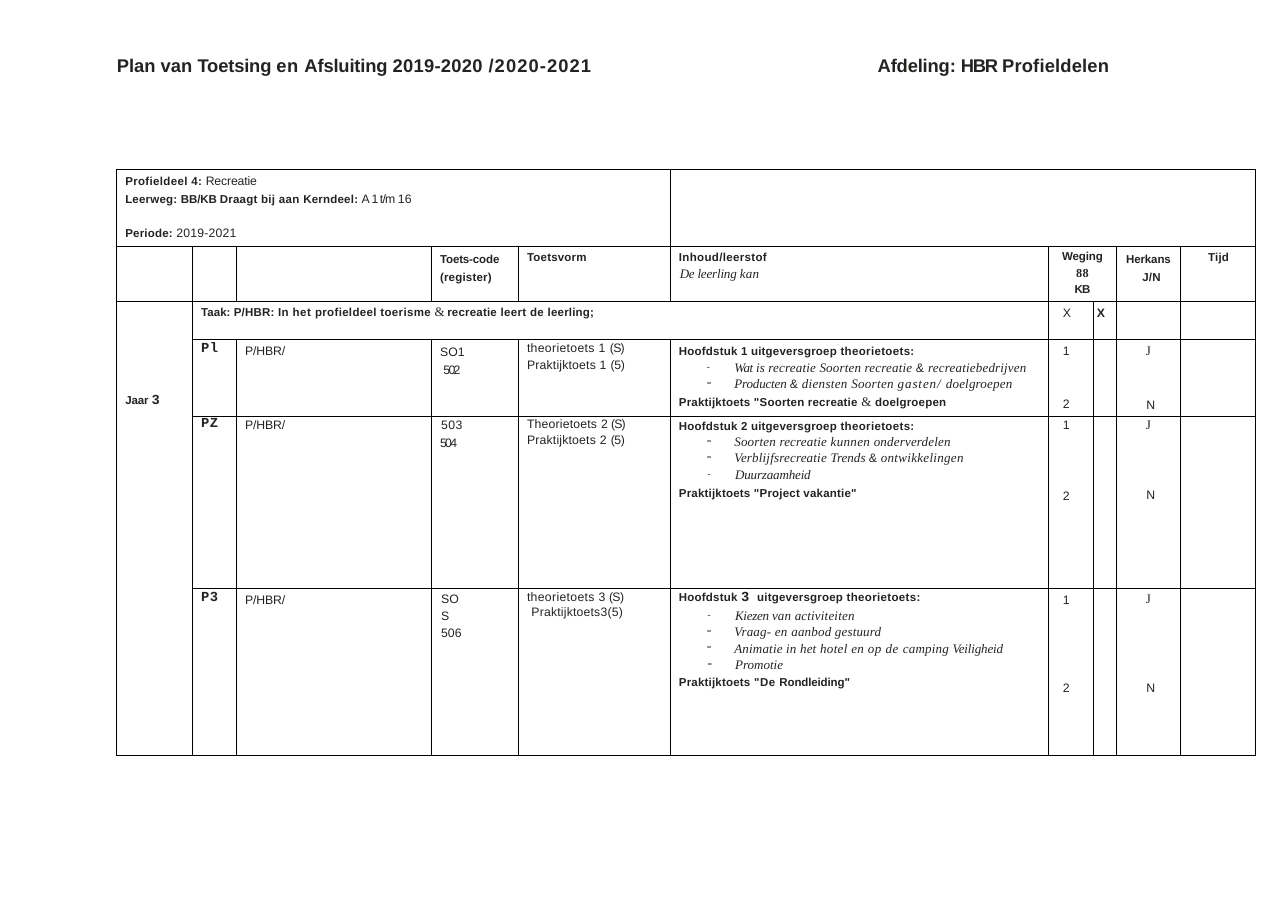
import pptx
import pptx.util
import pptx.dml.color
import pptx.enum.text
from lxml import etree

Pt = pptx.util.Pt
RGB = pptx.dml.color.RGBColor.from_string
ALIGN = pptx.enum.text.PP_ALIGN
A = "{http://schemas.openxmlformats.org/drawingml/2006/main}"

# Styles: font, size, bold, italic
THEME = {
    "ink": "232321", "line": "000000", "bullet": "464646",
    "rule": 0.75, "hairline": 0.25,
    "title": ("Arial", 12, True, False),
    "bold": ("Arial", 7.5, True, False),
    "text": ("Arial", 8, False, False),
    "mark": ("Arial", 8, True, False),
    "serif": ("Times New Roman", 8.5, False, False),
    "number": ("Times New Roman", 8, True, False),
    "topic": ("Times New Roman", 8.5, False, True),
    "code": ("Courier New", 9, True, False),
}


def write(box, top, *paras):
    """Fill a cell or text frame.

    Each paragraph: space before, indent, [(style, text, spacing)], "center" or bullet percent.
    """
    box.margin_left = box.margin_right = box.margin_bottom = 0
    box.margin_top = Pt(top)
    tf = getattr(box, "text_frame", box)
    for i, (before, indent, runs, *mark) in enumerate(paras):
        p = tf.paragraphs[0] if i == 0 else tf.add_paragraph()
        pPr = p._p.get_or_add_pPr()
        pPr.set("marL", str(Pt(indent)))
        pPr.set("indent", "0")
        p.alignment = ALIGN.CENTER if mark == ["center"] else ALIGN.LEFT
        if mark and mark != ["center"]:
            pPr.set("indent", str(Pt(-18)))
            color = etree.SubElement(pPr, A + "buClr")
            etree.SubElement(color, A + "srgbClr", val=THEME["bullet"])
            etree.SubElement(pPr, A + "buSzPct", val=str(mark[0] * 1000))
            etree.SubElement(pPr, A + "buChar", char="-")
        p.space_before = Pt(before if i else 0)
        for style, text, spacing in runs:
            r = p.add_run()
            r.text = text
            f = r.font
            f.name, size, f.bold, f.italic = THEME[style]
            f.size = Pt(size)
            f.color.rgb = RGB(THEME["ink"])
            r._r.get_or_add_rPr().set("spc", str(round(spacing * 100)))


def border(cell, side, width):
    tcPr = cell._tc.get_or_add_tcPr()
    ln = etree.SubElement(tcPr, A + "ln" + side, w=str(Pt(width)))
    fill = etree.SubElement(ln, A + "solidFill")
    etree.SubElement(fill, A + "srgbClr", val=THEME["line"])


prs = pptx.Presentation()
prs.slide_width, prs.slide_height = Pt(841), Pt(595.4)
s = prs.slides.add_slide(prs.slide_layouts[5])

# Headings
title = s.shapes.title
title.left, title.top, title.width, title.height = Pt(75.6), Pt(34.6), Pt(317.5), Pt(16.6)
department = s.shapes.add_textbox(Pt(572.4), Pt(34.6), Pt(154.8), Pt(16.6))
headings = [
    (title, [("title", "Plan van ", 0), ("title", "Toetsing ", -0.1), ("title", "en ", 0.3),
             ("title", "Afsluiting ", -0.1), ("title", "2019-2020 ", 0.2), ("title", "/2020-2021", 0.7)]),
    (department, [("title", "Afdeling: ", -0.1), ("title", "HBR ", -0.8), ("title", "Profieldelen", 0.1)]),
]
for sp, runs in headings:
    tf = sp.text_frame
    tf.word_wrap = False
    tf.auto_size = pptx.enum.text.MSO_AUTO_SIZE.NONE
    tf.vertical_anchor = pptx.enum.text.MSO_ANCHOR.TOP
    write(tf, 0.7, (0, 0.7, runs))

# Table grid
widths = [49.6, 28.7, 127.3, 56.8, 99.2, 247.2, 29.4, 14.9, 41.9, 49]
heights = [50.1, 36.1, 24.6, 50.3, 112.3, 109]
frame = s.shapes.add_table(len(heights), len(widths), Pt(76), Pt(110.8), Pt(sum(widths)), Pt(sum(heights)))
tbl = frame.table
tbl.first_row = tbl.horz_banding = False
for column, width in zip(tbl.columns, widths):
    column.width = Pt(width)
for row, height in zip(tbl.rows, heights):
    row.height = Pt(height)
for r in range(len(heights)):
    for c in range(len(widths)):
        cell = tbl.cell(r, c)
        cell.margin_left = cell.margin_right = cell.margin_top = cell.margin_bottom = 0
        for side in "LRTB":
            inner = r >= 2 and (c, side) in [(6, "R"), (7, "L")]
            border(cell, side, THEME["hairline"] if inner else THEME["rule"])
        cell.fill.background()
for r1, c1, r2, c2 in [(0, 0, 0, 4), (0, 5, 0, 9), (1, 6, 1, 7), (2, 0, 5, 0), (2, 1, 2, 5)]:
    tbl.cell(r1, c1).merge(tbl.cell(r2, c2))

# Heading rows: row, column, top margin, paragraphs
PAD = 5.8
heading_cells = [
    (0, 0, 2.9, [
        (0, PAD, [("bold", "Profieldeel 4: ", 0.2), ("text", "Recreatie", -0.1)]),
        (2.6, PAD, [("bold", "Leerweg: ", 0.1), ("bold", "BB/KB ", -0.1), ("bold", "Draagt ", 0.1),
                    ("bold", "bij aan ", 0.2), ("bold", "Kerndeel: ", 0.1), ("text", "A ", -0.7),
                    ("text", "1 t/m ", -0.6), ("text", "16", 0.1)]),
        (13.7, PAD, [("bold", "Periode: ", 0.1), ("text", "2019-2021", 0.1)])]),
    (1, 3, 4.1, [(0, PAD, [("bold", "Toets-code", -0.1)]), (3.4, PAD, [("bold", "(register)", 0.1)])]),
    (1, 4, 2.9, [(0, PAD, [("bold", "Toetsvorm", 0.1)])]),
    (1, 5, 2.9, [(0, PAD, [("bold", "Inhoud/leerstof", 0.2)]),
                 (1.8, 6.5, [("topic", "De ", -0.3), ("topic", "leerling ", -0.1), ("topic", "kan", 0.1)])]),
    (1, 6, 2.1, [(0, 0, [("bold", "Weging", -0.1)], "center"), (2.6, 0, [("number", "88", 0.2)], "center"),
                 (1.6, 0, [("bold", "KB", -0.5)], "center")]),
    (1, 8, 4.1, [(0, 0, [("bold", "Herkans", -0.1)], "center"), (3.8, 4, [("bold", "J/N", 0.1)], "center")]),
    (1, 9, 2.9, [(0, 0.7, [("bold", "Tijd", 0.1)], "center")]),
    (2, 0, 59.5, [(0, PAD, [("bold", "Jaar ", -0.1), ("code", "3", -0.3)])]),
    (2, 1, 2.2, [(0, PAD, [
        ("bold", "Taak: ", 0), ("bold", "P/HBR: ", 0.1), ("bold", "In ", 0.2), ("bold", "het ", 0.3),
        ("bold", "profieldeel toerisme ", 0.2), ("serif", "& ", -0.5), ("bold", "recreatie ", 0.1),
        ("bold", "leert de ", 0.2), ("bold", "leerling;", 0.1)])]),
    (2, 6, 2.9, [(0, 9.4, [("text", "X", 0)])]),
    (2, 7, 2.9, [(0, 2.2, [("mark", "X", 0)])]),
]
for r, c, top, paras in heading_cells:
    write(tbl.cell(r, c), top, *paras)

# Period rows: (top margin, paragraphs) for test codes, test forms and contents
periods = [
    ("Pl", 1.4, 2.9,
     (3.8, [(0, PAD, [("text", "SO1", 0)]), (2.9, 8, [("text", "502", -1.1)])]),
     (1.4, [(0, PAD, [("text", "theorietoets ", 0.2), ("text", "1 ", 0.3), ("text", "(S)", -0.5)]),
            (1.7, PAD, [("text", "Praktijktoets 1 ", 0.1), ("text", "(5)", -0.2)])]),
     (3.6, [(0, PAD, [("bold", "Hoofdstuk 1 uitgeversgroep ", 0.1), ("bold", "theorietoets:", 0.2)]),
            (2, 42, [("topic", "Wat ", -0.3), ("topic", "is recreatie Soorten recreatie ", 0.1),
                     ("text", "& ", 0.2), ("topic", "recreatiebedrijven", 0.1)], 71),
            (1.4, 42, [("topic", "Producten ", -0.1), ("text", "& ", 0.1), ("topic", "diensten Soorten ", 0.2),
                       ("topic", "gasten/ ", 0.6), ("topic", "doelgroepen", 0.1)], 106),
            (2.2, PAD, [("bold", "Praktijktoets \"Soorten recreatie ", 0.1), ("serif", "& ", 0.1),
                        ("bold", "doelgroepen", 0.1)])]),
     2.9, 2.9, 26),
    ("PZ", 0, 1.4,
     (1.4, [(0, 6.5, [("text", "503", 0.3)]), (2.5, PAD, [("text", "504", -1.1)])]),
     (0.4, [(0, PAD, [("text", "Theorietoets ", 0.1), ("text", "2 ", -0.1), ("text", "(S)", -0.6)]),
            (1.4, PAD, [("text", "Praktijktoets ", 0.1), ("text", "2 ", 0.2), ("text", "(5)", -0.3)])]),
     (2.2, [(0, PAD, [("bold", "Hoofdstuk 2 uitgeversgroep ", 0.1), ("bold", "theorietoets:", 0.2)]),
            (1.6, 42, [("topic", "Soorten recreatie ", 0.1), ("topic", "kunnen ", 0.2),
                       ("topic", "onderverdelen", 0.1)], 106),
            (1.2, 42, [("topic", "Verblijfsrecreatie ", 0.1), ("topic", "Trends ", 0), ("text", "& ", 0.1),
                       ("topic", "ontwikkelingen", 0.2)], 106),
            (1.7, 42.5, [("topic", "Duurzaamheid", -0.1)], 71),
            (2.9, PAD, [("bold", "Praktijktoets \"Project vakantie\"", 0.1)])]),
     1.4, 0.7, 37.2),
    ("P3", 1.4, 2.9,
     (2.3, [(0, 6.5, [("text", "SO", 0)]), (2.3, 6.5, [("text", "S", 0)]), (2.3, 6.5, [("text", "506", 0)])]),
     (1.1, [(0, PAD, [("text", "theorietoets ", 0.2), ("text", "3 ", 0), ("text", "(S)", -0.4)]),
            (1.2, 8.7, [("text", "Praktijktoets3(5)", 0.1)])]),
     (1.4, [(0, PAD, [("bold", "Hoofdstuk ", 0.1), ("code", "3 ", -0.3), ("bold", "uitgeversgroep ", 0.1),
                      ("bold", "theorietoets:", 0.2)]),
            (1.8, 42.5, [("topic", "Kiezen ", -0.2), ("topic", "van activiteiten", 0.1)], 71),
            (1.3, 42, [("topic", "Vraag- ", 0.1), ("topic", "en ", 0.2), ("topic", "aanbod gestuurd", 0.1)], 106),
            (1.2, 42, [("topic", "Animatie in het ", 0.1), ("topic", "hotel en ", 0.2), ("topic", "op ", 0.3),
                       ("topic", "de ", 0.4), ("topic", "camping ", 0.1), ("topic", "Veiligheid", -0.1)], 106),
            (1.2, 42.5, [("topic", "Promotie", 0)], 106),
            (2.7, PAD, [("bold", "Praktijktoets ", 0.1), ("bold", "\"De ", 0.3), ("bold", "Rondleiding\"", -0.1)])]),
     2.9, 2.2, 49),
]
for r, (period, period_top, task_top, codes, forms, contents, weight_top, resit_top, gap) in enumerate(periods, 3):
    write(tbl.cell(r, 1), period_top, (0, PAD, [("code", period, 0.3)]))
    write(tbl.cell(r, 2), task_top, (0, PAD, [("text", "P/HBR/", -0.1)]))
    for c, (top, paras) in enumerate([codes, forms, contents], 3):
        write(tbl.cell(r, c), top, *paras)
    write(tbl.cell(r, 6), weight_top, (0, 9.4, [("text", "1", 0)]), (gap, 9.4, [("text", "2", 0)]))
    write(tbl.cell(r, 8), resit_top,
          (0, 0, [("serif", "J", 0)], "center"), (gap, 3, [("text", "N", 0)], "center"))

prs.save("out.pptx")
